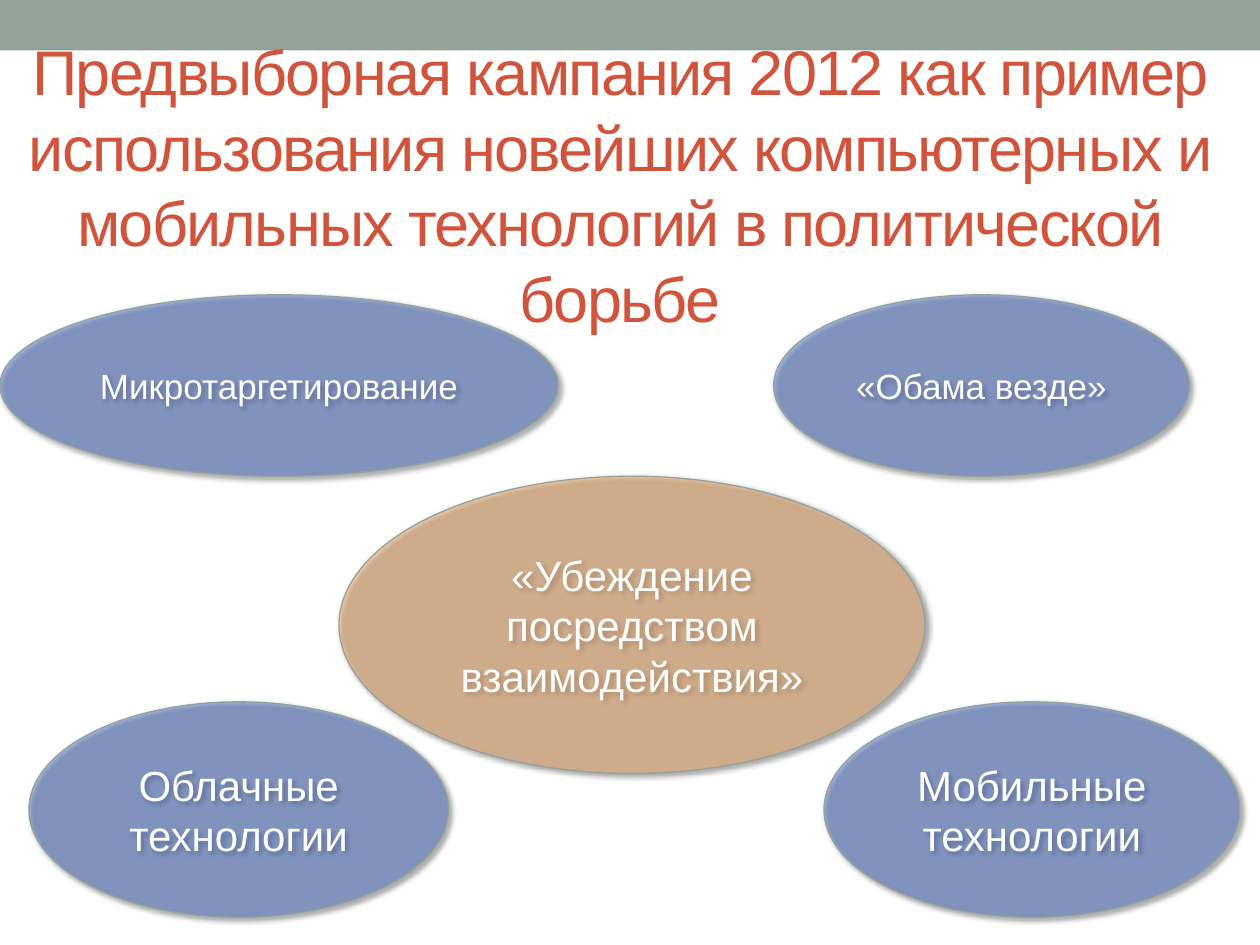
from dataclasses import dataclass

from lxml import etree
from pptx import Presentation
from pptx import util as u
from pptx.dml.color import RGBColor
from pptx.enum import shapes, text
from pptx.oxml.ns import qn


@dataclass(frozen=True)
class Theme:
    font: str = "Arial"
    sage: str = "93A299"
    red: str = "D2533C"
    blue: str = "5275C7"
    sand: str = "ECAA6D"
    white: str = "FFFFFF"
    black: str = "000000"
    head: int = 36
    big: int = 24
    small: int = 20


T = Theme()
WIDE, HIGH = 10, 7.5
TOP, LOW = 2.34, 5.57
TALL, DEEP = 1.44, 1.71
SPAN = 3.3
EDGE = 9.84


def rgb(code):
    return RGBColor.from_string(code)


def box(*sides):
    return [u.Inches(side) for side in sides]


def sub(node, tag, **attrs):
    return etree.SubElement(node, qn(tag), {k: str(v) for k, v in attrs.items()})


def write(shape, words, size, color, track=None):
    frame = shape.text_frame
    frame.word_wrap = True
    frame.vertical_anchor = text.MSO_ANCHOR.MIDDLE
    para = frame.paragraphs[0]
    para.alignment = text.PP_ALIGN.CENTER
    run = para.add_run()
    run.text = words
    run.font.name = T.font
    run.font.size = u.Pt(size)
    run.font.color.rgb = rgb(color)
    if track is not None:
        run.font._element.set("spc", str(int(track * 100)))


def fade(shape, share):
    tint = shape.fill._xPr.find(qn("a:solidFill"))[0]
    sub(tint, "a:alpha", val=share * 1000)


def shade(shape):
    shape.shadow.inherit = False
    effects = shape._element.spPr.find(qn("a:effectLst"))
    cast = sub(effects, "a:outerShdw", blurRad=u.Pt(3), dist=u.Pt(2),
               dir=45 * 60000, rotWithShape=0)
    tint = sub(cast, "a:srgbClr", val=T.black)
    sub(tint, "a:alpha", val=60000)


def band(slide):
    bar = slide.shapes.add_shape(shapes.MSO_SHAPE.RECTANGLE, *box(0, 0, WIDE, 0.4))
    bar.fill.solid()
    bar.fill.fore_color.rgb = rgb(T.sage)
    bar.line.fill.background()
    bar.shadow.inherit = False


def title(slide, words):
    area = slide.shapes.add_textbox(*box(0, 0.44, EDGE, 2.04))
    write(area, words, T.head, T.red, track=-1)


def oval(slide, words, place, size, color=T.blue, share=50):
    shape = slide.shapes.add_shape(shapes.MSO_SHAPE.OVAL, *box(*place))
    shape.fill.solid()
    shape.fill.fore_color.rgb = rgb(color)
    fade(shape, share)
    shape.line.color.rgb = rgb(T.sage)
    shape.line.width = u.Pt(0.75)
    shade(shape)
    write(shape, words, size, T.white)


def main():
    deck = Presentation()
    deck.slide_width, deck.slide_height = box(WIDE, HIGH)
    slide = deck.slides.add_slide(deck.slide_layouts[6])
    band(slide)
    title(slide, "Предвыборная кампания 2012 как пример использования новейших "
                 "компьютерных и мобильных технологий в политической борьбе")
    oval(slide, "«Убеждение посредством взаимодействия»",
         (2.69, TOP + TALL, 4.65, 2.36), T.big, T.sand, 53)
    for words, left, top, wide, tall, size in (
        ("Микротаргетирование", 0, TOP, 4.43, TALL, T.small),
        ("«Обама везде»", 6.14, TOP, SPAN, TALL, T.small),
        ("Облачные технологии", 0.23, LOW, 3.33, DEEP, T.big),
        ("Мобильные технологии", EDGE - SPAN, LOW, SPAN, DEEP, T.big),
    ):
        oval(slide, words, (left, top, wide, tall), size)
    deck.save("out.pptx")


if __name__ == "__main__":
    main()
